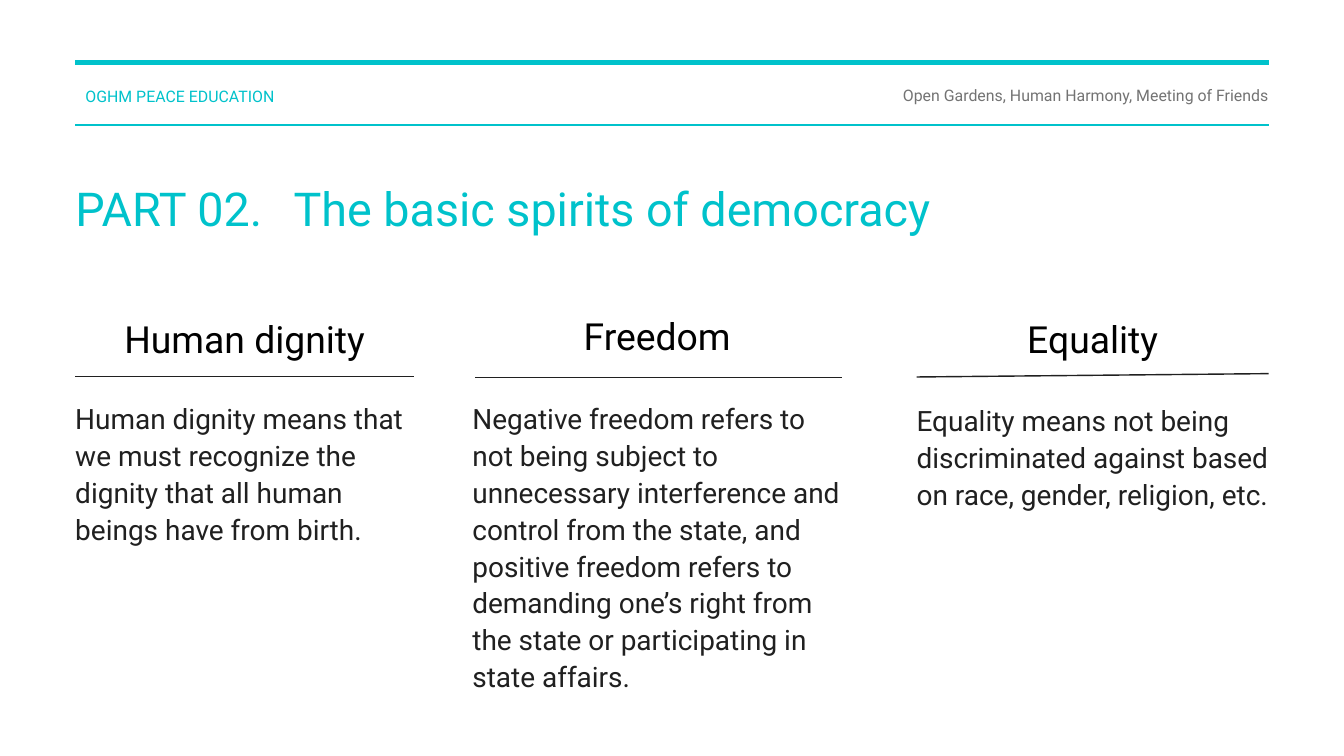
from lxml import etree
from pptx import Presentation
from pptx.dml.color import RGBColor
from pptx.enum.shapes import MSO_CONNECTOR
from pptx.enum.text import MSO_AUTO_SIZE, PP_ALIGN
from pptx.oxml.ns import qn
from pptx.util import Inches, Pt

TEAL = RGBColor(0x00, 0xC2, 0xCB)
GRAY = RGBColor(0x73, 0x73, 0x73)
DARK = RGBColor(0x20, 0x20, 0x20)
BLACK = RGBColor(0x00, 0x00, 0x00)
FONT = "Roboto"
LEFT, RIGHT = 1.12, 18.88

COLUMNS = [
    {"box": (LEFT, 4.6, 5.04, 4.1), "rule": (LEFT, 5.6, 6.16, 5.6),
     "body_top": 5.93, "heading": "Human dignity",
     "body": "Human dignity means that we must recognize the dignity "
             "that all human beings have from birth."},
    {"box": (7.03, 4.55, 5.5, 6.38), "rule": (7.07, 5.62, 12.53, 5.62),
     "body_top": 5.92, "heading": "Freedom",
     "body": "Negative freedom refers to not being subject to unnecessary "
             "interference and control from the state, and positive freedom "
             "refers to demanding one’s right from the state or "
             "participating in state affairs."},
    {"box": (13.64, 4.6, 5.24, 4.12), "rule": (13.64, 5.61, RIGHT, 5.56),
     "body_top": 5.95, "heading": "Equality",
     "body": "Equality means not being discriminated against based on race, "
             "gender, religion, etc."},
]


def add_rule(s, x1, y1, x2, y2, color, weight):
    line = s.shapes.add_connector(
        MSO_CONNECTOR.STRAIGHT, Inches(x1), Inches(y1), Inches(x2), Inches(y2))
    line.line.color.rgb = color
    line.line.width = Pt(weight)
    etree.SubElement(line._element.spPr, qn("a:effectLst"))


def add_text(s, box, text, size, color, spacing, align=PP_ALIGN.LEFT):
    sp = s.shapes.add_textbox(*map(Inches, box))
    tf = sp.text_frame
    tf.margin_left = tf.margin_right = tf.margin_top = tf.margin_bottom = 0
    tf.word_wrap = True
    tf.auto_size = MSO_AUTO_SIZE.SHAPE_TO_FIT_TEXT
    tf.text = text
    p = tf.paragraphs[0]
    p.alignment = align
    p.line_spacing = Pt(spacing)
    font = p.runs[0].font
    font.name = FONT
    font.size = Pt(size)
    font.color.rgb = color


def add_header(s, left, top, width, height):
    right = left + width
    add_rule(s, left, top, right, top, TEAL, 5.25)
    add_rule(s, left, top + height, right, top + height, TEAL, 1.5)
    add_text(s, (left + 0.15, top + 0.31, 4.89, 0.32),
             "OGHM PEACE EDUCATION", 17, TEAL, 23.8, PP_ALIGN.JUSTIFY)
    add_text(s, (right - 7.9, top + 0.32, 7.9, 0.31),
             "Open Gardens, Human Harmony, Meeting of Friends",
             17, GRAY, 22.1, PP_ALIGN.RIGHT)


def add_title(s, left, top, width, height):
    add_text(s, (left, top + 0.06, 3.02, height - 0.06),
             "PART 02.", 50, TEAL, 55)
    add_text(s, (left + 3.25, top, width - 3.25, height),
             "The basic spirits of democracy", 50, TEAL, 60)


def add_column(s, box, rule, body_top, heading, body):
    left, top, width, height = box
    add_text(s, (left, top, width, 0.74), heading, 40, BLACK, 56,
             PP_ALIGN.CENTER)
    add_rule(s, *rule, DARK, 1.5)
    add_text(s, (left, body_top, width, top + height - body_top),
             body, 30, DARK, 39.6)


def main():
    prs = Presentation()
    prs.slide_width = Inches(20)
    prs.slide_height = Inches(11.25)
    s = prs.slides.add_slide(prs.slide_layouts[6])
    add_header(s, LEFT, 0.93, RIGHT - LEFT, 0.93)
    add_title(s, LEFT, 2.68, RIGHT - LEFT, 0.84)
    for column in COLUMNS:
        add_column(s, **column)
    prs.save("out.pptx")


if __name__ == "__main__":
    main()
